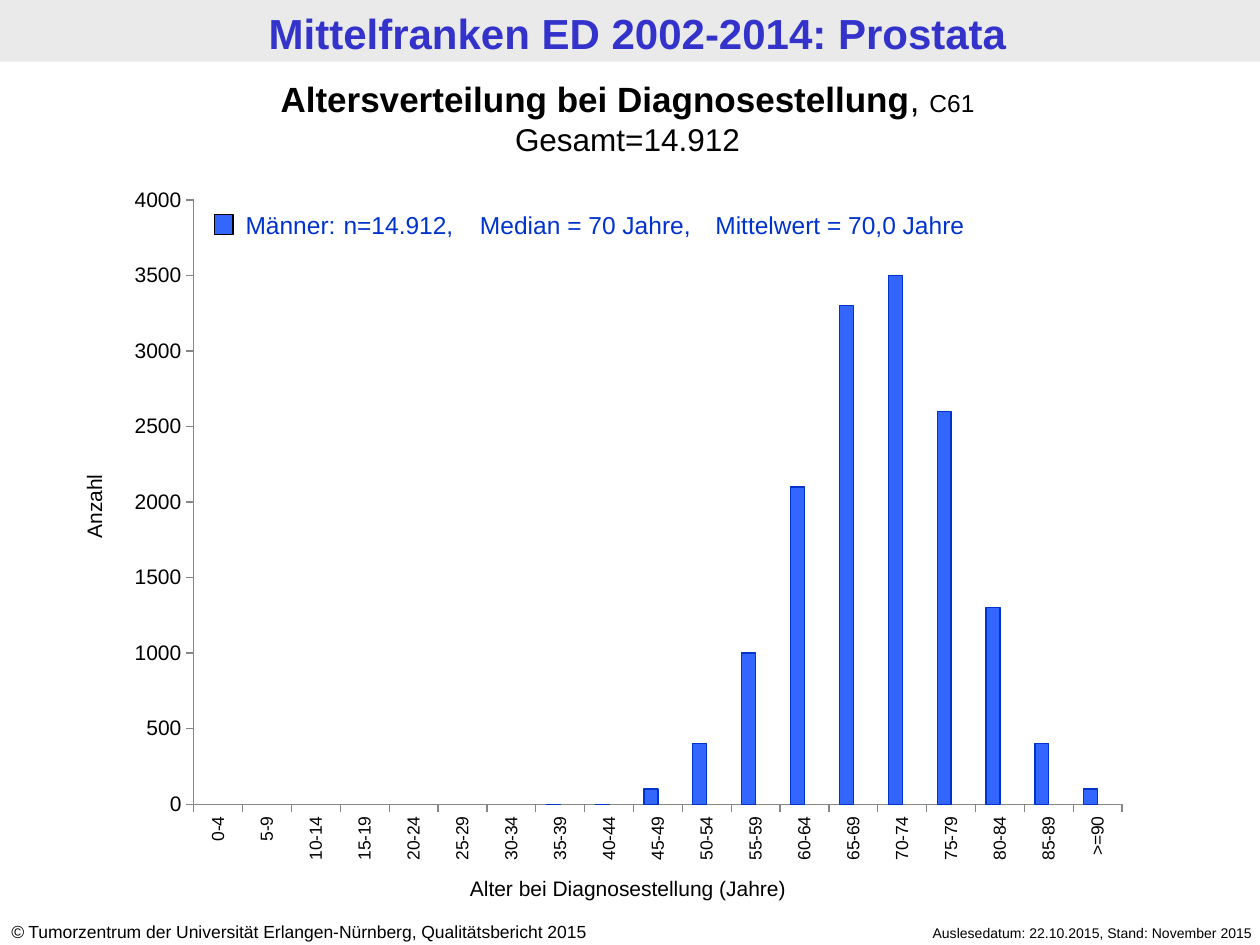
from lxml import etree
from pptx import Presentation
from pptx.chart.data import CategoryChartData
from pptx.dml.color import RGBColor
from pptx.enum.chart import XL_CHART_TYPE as Chart, XL_TICK_MARK as Tick
from pptx.enum.shapes import MSO_SHAPE as Shape
from pptx.enum.text import MSO_AUTO_SIZE as Auto, PP_ALIGN as Align
from pptx.oxml import parse_xml
from pptx.oxml.ns import nsdecls, qn
from pptx.util import Pt

COLORS = {
    "band": "EAEAEA", "title": "3333CC", "text": "000000", "axis": "868686",
    "plot": "FFFFFF", "men": "3366FF", "men_line": "0033CC",
    "women": "FF0000", "women_line": "632523",
}

AGES = [f"{a}-{a + 4}" for a in range(0, 90, 5)] + [">=90"]
MEN = [None] * 7 + [0, 0, 100, 400, 1000, 2100, 3300, 3500, 2600, 1300, 400, 100]
SERIES = [
    ("Series 1", MEN, "men", "men_line"),
    ("Series 2", [None] * len(AGES), "women", "women_line"),
]
PLOT = {"x": 0.077, "y": 0.036, "w": 0.903, "h": 0.864}
LEGEND_TABS = [56, 63, 134, 268.5]

L, C, R = Align.LEFT, Align.CENTER, Align.RIGHT
TEXTS = [
    ((4.3, 0.7, 720, 35.3), C, "title", 0,
     [[("Mittelfranken ED 2002-2014: Prostata", 24, "b")]]),
    ((478.8, 524.9, 244, 17.3), R, "text", 0,
     [[("Auslesedatum: 22.10.2015, Stand: November 2015", 8, "")]]),
    ((-0.7, 522.7, 377.3, 19.4), L, "text", 0,
     [[("©", 10, "i"),
       (" Tumorzentrum der Universität Erlangen-Nürnberg, Qualitätsbericht 2015", 10, "")]]),
    ((-2.9, 41, 723, 53.3), C, "text", 0,
     [[("Altersverteilung bei Diagnosestellung", 20, "b"), (", ", 20, ""), ("C61", 14, "")],
      [("Gesamt=14.912", 18, "")]]),
    ((133.2, 116.6, 493.2, 24.5), L, "men_line", 0,
     [[("Männer: \tn=14.912, \tMedian = 70 Jahre, \tMittelwert = 70,0 Jahre", 14, "")]]),
    ((248.4, 496.8, 221, 21.6), C, "text", 0,
     [[("Alter bei Diagnosestellung (Jahre)", 12, "")]]),
    ((-40.3, 278.6, 188, 21.6), C, "text", 270, [[("Anzahl", 12, "")]]),
]


def color(name):
    return RGBColor.from_string(COLORS[name])


def add_rect(s, box, fill, line=None):
    sp = s.shapes.add_shape(Shape.RECTANGLE, *map(Pt, box))
    sp.shadow.inherit = False
    sp.fill.solid()
    sp.fill.fore_color.rgb = color(fill)
    if line:
        sp.line.color.rgb = color(line)
        sp.line.width = Pt(0.75)
    else:
        sp.line.fill.background()


def add_tabs(p, stops):
    tabs = etree.SubElement(p._p.get_or_add_pPr(), qn("a:tabLst"))
    for stop in stops:
        etree.SubElement(tabs, qn("a:tab"), pos=str(Pt(stop)), algn="l")


def add_text(s, box, align, ink, turn, paragraphs):
    sp = s.shapes.add_textbox(*map(Pt, box))
    sp.rotation = turn
    tf = sp.text_frame
    tf.word_wrap = True
    tf.auto_size = Auto.SHAPE_TO_FIT_TEXT
    for i, runs in enumerate(paragraphs):
        p = tf.add_paragraph() if i else tf.paragraphs[0]
        p.alignment = align
        if any("\t" in text for text, _, _ in runs):
            add_tabs(p, LEGEND_TABS)
        for text, size, style in runs:
            r = p.add_run()
            r.text = text
            r.font.name = "Arial"
            r.font.size = Pt(size)
            r.font.bold = "b" in style
            r.font.italic = "i" in style
            r.font.color.rgb = color(ink)


def style_axis(axis, size):
    axis.has_major_gridlines = False
    axis.major_tick_mark = Tick.OUTSIDE
    axis.minor_tick_mark = Tick.NONE
    axis.format.line.color.rgb = color("axis")
    axis.format.line.width = Pt(0.75)
    font = axis.tick_labels.font
    font.name = "Arial"
    font.size = Pt(size)
    font.color.rgb = color("text")


def add_age_chart(s):
    data = CategoryChartData()
    data.categories = AGES
    for name, values, _, _ in SERIES:
        data.add_series(name, values)
    box = map(Pt, (65.5, 100, 587.5, 399.6))
    chart = s.shapes.add_chart(Chart.COLUMN_CLUSTERED, *box, data).chart
    chart.has_legend = False
    chart.has_title = False
    chart.font.name = "Calibri"
    chart.font.size = Pt(18)
    chart.font.color.rgb = color("text")

    plot = chart.plots[0]
    plot.gap_width = 150
    plot.overlap = 0
    plot.vary_by_categories = False
    for ser, (_, _, fill, line) in zip(plot.series, SERIES):
        ser.invert_if_negative = False
        ser.format.fill.solid()
        ser.format.fill.fore_color.rgb = color(fill)
        ser.format.line.color.rgb = color(line)
        ser.format.line.width = Pt(0.75)

    ages, counts = chart.category_axis, chart.value_axis
    style_axis(ages, 10)
    style_axis(counts, 12)
    counts.minimum_scale, counts.maximum_scale, counts.major_unit = 0, 4000, 500
    body = ages._element.find(qn("c:txPr")).find(qn("a:bodyPr"))
    body.set("rot", "-5400000")
    body.set("vert", "horz")

    area = chart._chartSpace.chart.plotArea
    for old in area.findall(qn("c:layout")):
        area.remove(old)
    modes = '<c:layoutTarget val="inner"/><c:xMode val="edge"/><c:yMode val="edge"/>'
    sizes = "".join(f'<c:{key} val="{val}"/>' for key, val in PLOT.items())
    area.insert(0, parse_xml(
        f'<c:layout {nsdecls("c")}><c:manualLayout>{modes}{sizes}</c:manualLayout></c:layout>'))
    area.append(parse_xml(
        f'<c:spPr {nsdecls("c", "a")}><a:solidFill><a:srgbClr val="{COLORS["plot"]}"/>'
        '</a:solidFill><a:ln><a:noFill/></a:ln></c:spPr>'))


def main():
    prs = Presentation()
    prs.slide_width, prs.slide_height = Pt(720), Pt(540)
    s = prs.slides.add_slide(prs.slide_layouts[6])
    add_rect(s, (0, 0, 720, 35.3), "band")
    add_age_chart(s)
    for item in TEXTS:
        add_text(s, *item)
    add_rect(s, (122.4, 122.4, 10.8, 11.5), "men", "text")
    prs.save("out.pptx")


if __name__ == "__main__":
    main()
